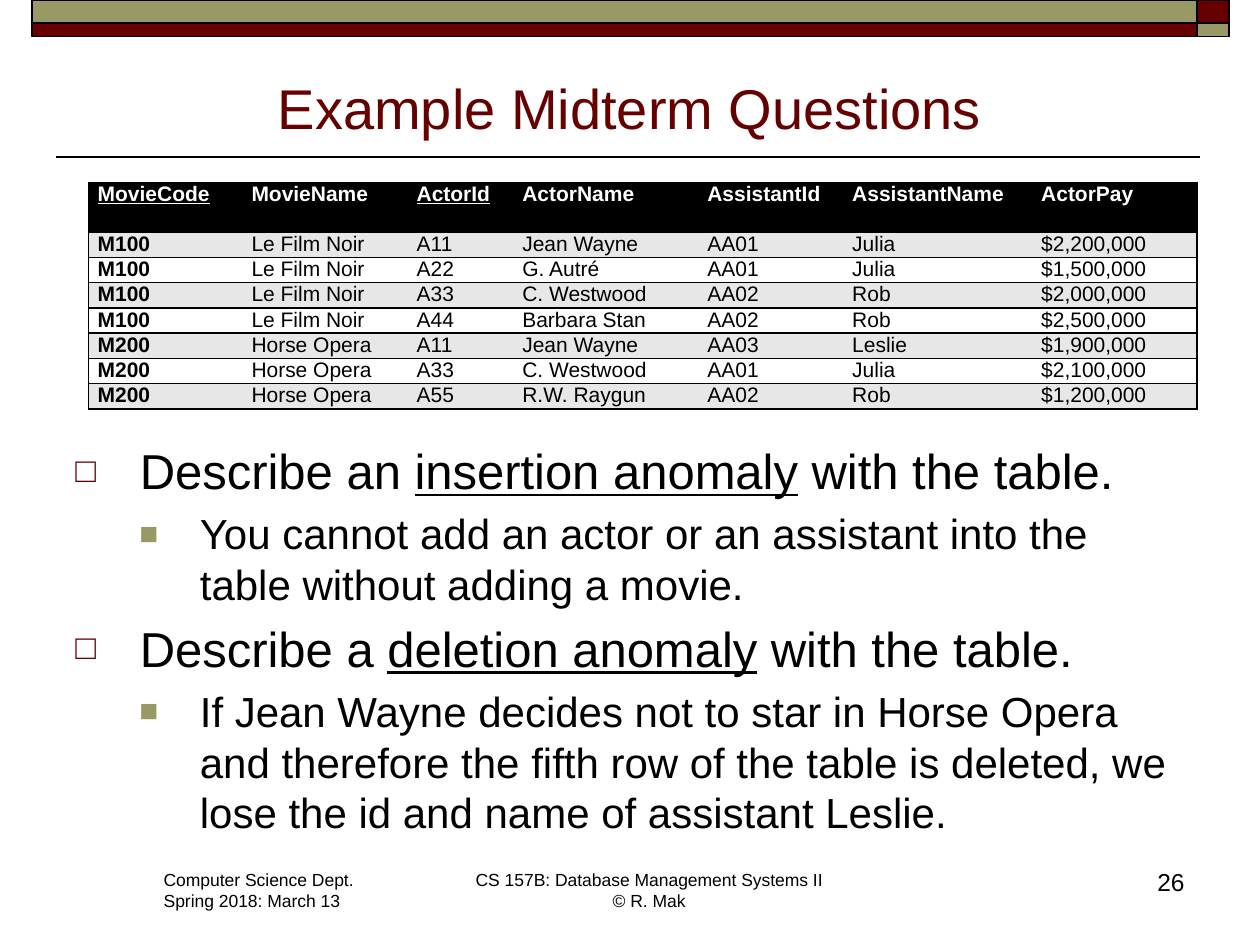
"""Build the midterm question slide on insertion and deletion anomalies."""
from lxml import etree
from pptx import Presentation
from pptx import util as u
from pptx.dml.color import RGBColor
from pptx.enum import shapes, text
from pptx.oxml.ns import qn

COLORS = {"maroon": "660000", "olive": "999966", "black": "000000",
          "white": "FFFFFF", "band": "E7E7E7"}

TITLE = "Example Midterm Questions"
DEPARTMENT = ["Computer Science Dept.", "Spring 2018: March 13"]
COURSE = ["CS 157B: Database Management Systems II\n© R. Mak"]
PAGE_NUMBER = "26"

HEADERS = ["MovieCode", "MovieName", "ActorId", "ActorName",
           "AssistantId", "AssistantName", "ActorPay"]
KEYS = {"MovieCode", "ActorId"}
CASTING = [
    ("M100", "Le Film Noir", "A11", "Jean Wayne", "AA01", "Julia", "$2,200,000"),
    ("M100", "Le Film Noir", "A22", "G. Autré", "AA01", "Julia", "$1,500,000"),
    ("M100", "Le Film Noir", "A33", "C. Westwood", "AA02", "Rob", "$2,000,000"),
    ("M100", "Le Film Noir", "A44", "Barbara Stan", "AA02", "Rob", "$2,500,000"),
    ("M200", "Horse Opera", "A11", "Jean Wayne", "AA03", "Leslie", "$1,900,000"),
    ("M200", "Horse Opera", "A33", "C. Westwood", "AA01", "Julia", "$2,100,000"),
    ("M200", "Horse Opera", "A55", "R.W. Raygun", "AA02", "Rob", "$1,200,000"),
]
COLUMN_WIDTHS = [3.1, 3.33, 2.13, 3.73, 2.92, 3.81, 3.33]
HEADER_HEIGHT, ROW_HEIGHT = 1, 0.5

QUESTIONS = [
    (0, ["Describe an ", ("insertion anomaly",), " with the table."]),
    (1, ["You cannot add an actor or an assistant into the table "
         "without adding a movie."]),
    (0, ["Describe a ", ("deletion anomaly",), " with the table."]),
    (1, ["If Jean Wayne decides not to star in Horse Opera and therefore the "
         "fifth row of the table is deleted, we lose the id and name of "
         "assistant Leslie."]),
]
LEVELS = [
    {"size": 28, "mark": "□", "color": "maroon", "scale": 70, "left": 1.3, "hang": 1.3},
    {"size": 24, "mark": "■", "color": "olive", "scale": 75, "left": 2.51, "hang": 1.22},
]

BAR_LEFT, BAR_SPLIT, BAR_RIGHT = 0.64, 24.13, 24.77
BAR_TOPS = [0, 0.46, 0.74]


def rgb(name):
    return RGBColor.from_string(COLORS[name])


def write(frame, content, level=None, first=True, size=12, color="black",
          align=text.PP_ALIGN.LEFT, bold=False, underline=False):
    """Write one paragraph; a run given as a tuple is underlined."""
    paragraph = frame.paragraphs[0] if first else frame.add_paragraph()
    paragraph.alignment = align
    if level is not None:
        add_bullet(paragraph, level, first)
        size = LEVELS[level]["size"]
    for piece in [content] if isinstance(content, str) else content:
        marked = isinstance(piece, tuple)
        for number, line in enumerate((piece[0] if marked else piece).split("\n")):
            if number:
                paragraph.add_line_break()
            run = paragraph.add_run()
            run.text = line
            run.font.name = "Arial"
            run.font.size = u.Pt(size)
            run.font.bold = bold
            run.font.underline = underline or marked
            run.font.color.rgb = rgb(color)


def add_bullet(paragraph, level, first):
    style = LEVELS[level]
    paragraph.level = level
    props = paragraph._p.get_or_add_pPr()
    props.set("marL", str(u.Cm(style["left"])))
    props.set("indent", str(-u.Cm(style["hang"])))
    tint = etree.SubElement(props, qn("a:buClr"))
    etree.SubElement(tint, qn("a:srgbClr"), val=COLORS[style["color"]])
    etree.SubElement(props, qn("a:buSzPct"), val=str(style["scale"] * 1000))
    etree.SubElement(props, qn("a:buFont"), typeface="Arial")
    etree.SubElement(props, qn("a:buChar"), char=style["mark"])
    paragraph.space_before = u.Pt(0 if first else style["size"] * 0.2)


def add_box(slide, left, top, width, height, wrap=True, anchor=text.MSO_ANCHOR.TOP):
    frame = slide.shapes.add_textbox(*map(u.Cm, (left, top, width, height))).text_frame
    frame.word_wrap = wrap
    frame.vertical_anchor = anchor
    return frame


def add_bar(slide, left, right, top, bottom, color):
    bar = slide.shapes.add_shape(shapes.MSO_SHAPE.RECTANGLE, u.Cm(left), u.Cm(top),
                                 u.Cm(right - left), u.Cm(bottom - top))
    bar.shadow.inherit = False
    bar.fill.solid()
    bar.fill.fore_color.rgb = rgb(color)
    bar.line.color.rgb = rgb("black")
    bar.line.width = u.Pt(1)


def add_rule(slide):
    rule = slide.shapes.add_connector(shapes.MSO_CONNECTOR.STRAIGHT, u.Cm(24.2),
                                      u.Cm(3.17), u.Cm(1.12), u.Cm(3.17))
    rule.line.color.rgb = rgb("black")
    rule.line.width = u.Pt(1)
    etree.SubElement(rule._element.spPr, qn("a:effectLst"))


def set_borders(cell, visible):
    props = cell._tc.get_or_add_tcPr()
    for position, side in enumerate("LRTB"):
        edge = etree.Element(qn(f"a:ln{side}"), w=str(u.Pt(1)))
        if side in visible:
            fill = etree.SubElement(edge, qn("a:solidFill"))
            etree.SubElement(fill, qn("a:srgbClr"), val=COLORS["black"])
        else:
            etree.SubElement(edge, qn("a:noFill"))
        props.insert(position, edge)


def add_casting_table(slide):
    records = [HEADERS, *CASTING]
    heights = [HEADER_HEIGHT] + [ROW_HEIGHT] * len(CASTING)
    table = slide.shapes.add_table(len(records), len(HEADERS), u.Cm(1.78), u.Cm(3.68),
                                   u.Cm(sum(COLUMN_WIDTHS)), u.Cm(sum(heights))).table
    table.horz_banding = False
    for column, width in zip(table.columns, COLUMN_WIDTHS):
        column.width = u.Cm(width)
    for r, (record, height) in enumerate(zip(records, heights)):
        table.rows[r].height = u.Cm(height)
        background = "black" if r == 0 else "band" if r % 2 else "white"
        for c, value in enumerate(record):
            cell = table.cell(r, c)
            cell.margin_left = cell.margin_right = u.Cm(0.19)
            cell.margin_top = cell.margin_bottom = 0
            cell.fill.solid()
            cell.fill.fore_color.rgb = rgb(background)
            outer = {0: "L", len(record) - 1: "R"}.get(c, "")
            set_borders(cell, "TB" + outer)
            write(cell.text_frame, value, bold=r == 0 or c == 0,
                  underline=value in KEYS, color="white" if r == 0 else "black")


def main():
    deck = Presentation()
    deck.slide_width, deck.slide_height = u.Cm(25.4), u.Cm(19.05)
    slide = deck.slides.add_slide(deck.slide_layouts[6])

    add_rule(slide)
    for row, (wide, corner) in enumerate([("olive", "maroon"), ("maroon", "olive")]):
        top, bottom = BAR_TOPS[row:row + 2]
        add_bar(slide, BAR_LEFT, BAR_SPLIT, top, bottom, wide)
        add_bar(slide, BAR_SPLIT, BAR_RIGHT, top, bottom, corner)

    center, right = text.PP_ALIGN.CENTER, text.PP_ALIGN.RIGHT
    department = add_box(slide, 3.05, 17.4, 4.55, 1.12, wrap=False)
    for number, line in enumerate(DEPARTMENT):
        write(department, line, first=number == 0, size=10)
    write(add_box(slide, 9.3, 17.4, 7.57, 1.12, wrap=False), COURSE, size=10, align=center)
    write(add_box(slide, 1.27, 1.14, 22.86, 1.83, anchor=text.MSO_ANCHOR.BOTTOM),
          TITLE, size=32, color="maroon", align=center)

    questions = add_box(slide, 1.27, 8.76, 22.86, 8.26)
    for number, (level, content) in enumerate(QUESTIONS):
        write(questions, content, level=level, first=number == 0)

    write(add_box(slide, 22.1, 17.35, 2.03, 1.27), PAGE_NUMBER, size=14, align=right)
    add_casting_table(slide)
    deck.save("out.pptx")


if __name__ == "__main__":
    main()
